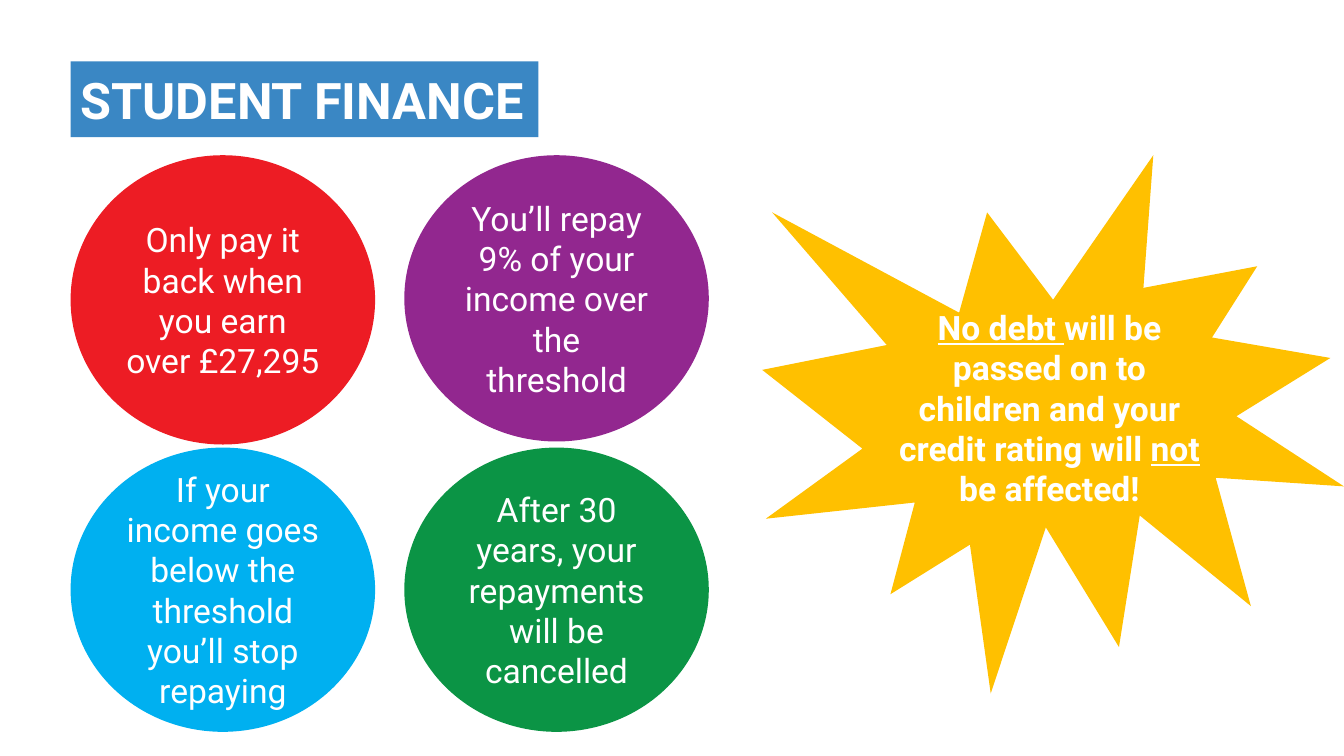
from pptx import Presentation
from pptx.dml.color import RGBColor
from pptx.enum.shapes import MSO_SHAPE
from pptx.enum.text import MSO_ANCHOR, MSO_AUTO_SIZE, PP_ALIGN
from pptx.util import Inches, Pt

WHITE = RGBColor(0xFF, 0xFF, 0xFF)
BLUE = RGBColor(0x3A, 0x87, 0xC4)
RED = RGBColor(0xED, 0x1C, 0x24)
PURPLE = RGBColor(0x92, 0x27, 0x8F)
SKY = RGBColor(0x00, 0xB0, 0xF0)
GREEN = RGBColor(0x0B, 0x94, 0x45)
AMBER = RGBColor(0xFF, 0xC0, 0x00)

FONT = "Roboto"
LEFT, TOP = 0.7, 1.54
COL_STEP, ROW_STEP = 3.31, 2.9
CIRCLE_WIDTH = 3.02

FACTS = [
    (0, 0, 2.87, RED, "Only pay it back when you earn over £27,295"),
    (1, 0, 2.84, PURPLE, "You’ll repay 9% of your income over the threshold"),
    (0, 1, 2.82, SKY, "If your income goes below the threshold you’ll stop repaying"),
    (1, 1, 2.82, GREEN, "After 30 years, your repayments will be cancelled"),
]
REASSURANCE = [
    ("No debt ", True),
    ("will be passed on to children and your credit rating will ", False),
    ("not", True),
    (" be affected!", False),
]


def fill_solid(sp, color):
    sp.fill.solid()
    sp.fill.fore_color.rgb = color


def write(sp, runs, size, bold, align):
    tf = sp.text_frame
    tf.word_wrap = True
    tf.auto_size = MSO_AUTO_SIZE.NONE
    tf.vertical_anchor = MSO_ANCHOR.MIDDLE
    p = tf.paragraphs[0]
    p.alignment = align
    for text, underline in runs:
        r = p.add_run()
        r.text = text
        r.font.name = FONT
        r.font.size = Pt(size)
        r.font.bold = bold
        r.font.underline = underline
        r.font.color.rgb = WHITE


def add_title(s, text):
    sp = s.shapes.title
    sp.left, sp.top = Inches(LEFT), Inches(0.61)
    sp.width, sp.height = Inches(4.64), Inches(0.75)
    fill_solid(sp, BLUE)
    write(sp, [(text, False)], 36, True, PP_ALIGN.LEFT)


def add_bubble(s, kind, box, color, runs, bold=False):
    sp = s.shapes.add_shape(kind, *map(Inches, box))
    sp.shadow.inherit = False
    sp.line.fill.background()
    fill_solid(sp, color)
    write(sp, runs, 24, bold, PP_ALIGN.CENTER)


def main():
    prs = Presentation()
    prs.slide_width, prs.slide_height = Inches(13.33), Inches(7.5)
    s = prs.slides.add_slide(prs.slide_layouts[5])
    add_title(s, "STUDENT FINANCE")
    for col, row, height, color, text in FACTS:
        box = (LEFT + col * COL_STEP, TOP + row * ROW_STEP, CIRCLE_WIDTH, height)
        add_bubble(s, MSO_SHAPE.OVAL, box, color, [(text, False)])
    add_bubble(s, MSO_SHAPE.EXPLOSION1, (7.56, TOP, 5.77, 5.34), AMBER, REASSURANCE, bold=True)
    prs.save("out.pptx")


if __name__ == "__main__":
    main()
